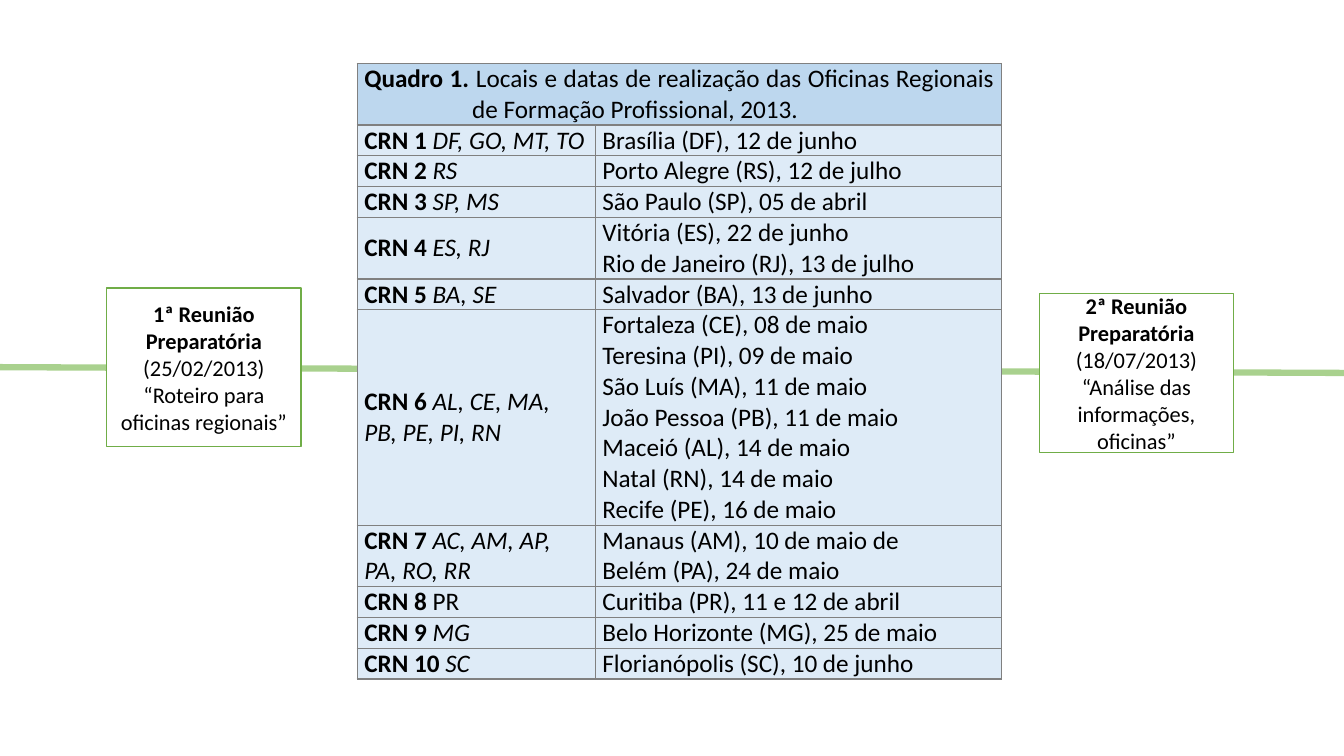
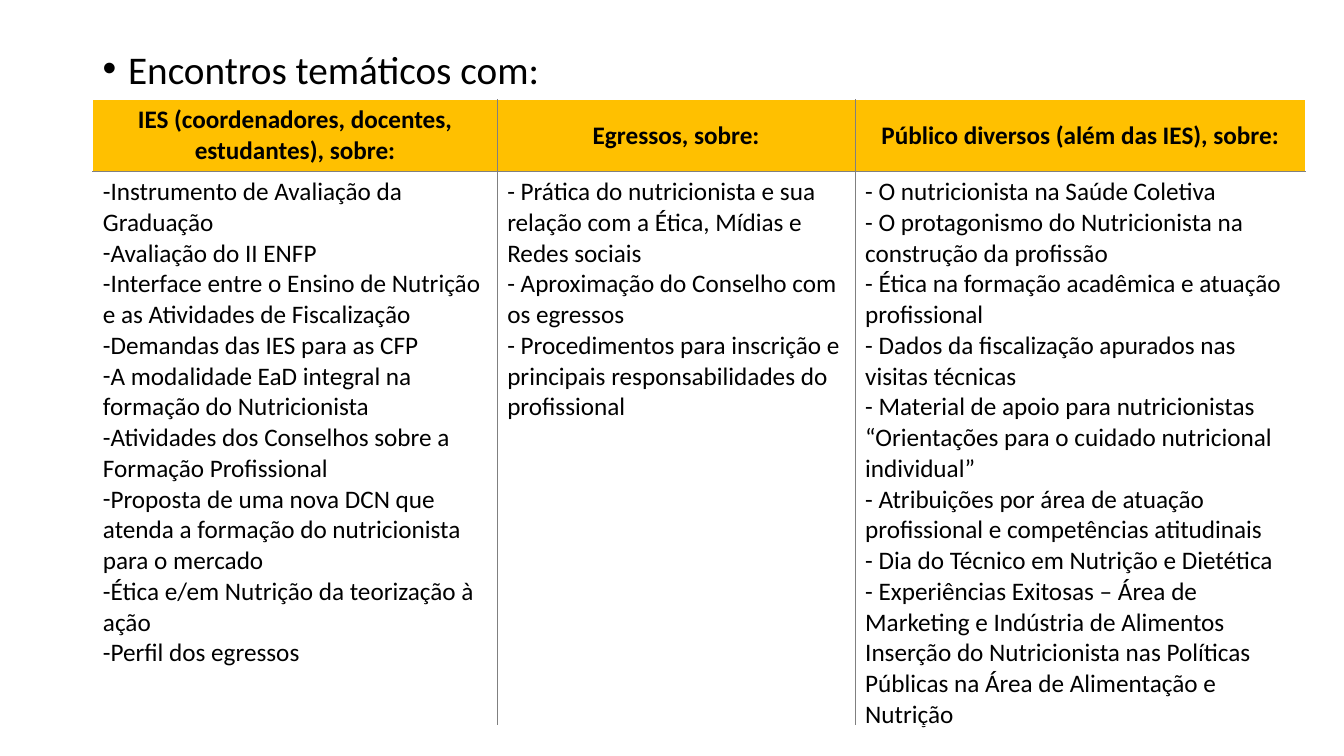
from lxml import etree
from pptx import Presentation
from pptx.dml.color import RGBColor
from pptx.enum import shapes, text
from pptx.oxml import ns
from pptx.util import Cm, Pt

FONT = "Calibri"
BLACK = RGBColor(0x00, 0x00, 0x00)
WHITE = RGBColor(0xFF, 0xFF, 0xFF)
GRAY = RGBColor(0x80, 0x80, 0x80)
GREEN = RGBColor(0x70, 0xAD, 0x47)
LIGHT_GREEN = RGBColor(0xA9, 0xD1, 0x8E)
BLUE = RGBColor(0xBD, 0xD7, 0xEE)
PALE_BLUE = RGBColor(0xDE, 0xEB, 0xF7)
AMBER = RGBColor(0xFF, 0xC0, 0x00)


def add_run(paragraph, words, size=18, bold=False, italic=False):
    run = paragraph.add_run()
    run.text = words
    run.font.name = FONT
    run.font.size = Pt(size)
    run.font.bold = bold
    run.font.italic = italic
    run.font.color.rgb = BLACK


def style_cell(cell, fill, borders):
    """Set the fill and the left, right, top and bottom border colours."""
    properties = cell._tc.get_or_add_tcPr()
    for side, color in zip("LRTB", borders):
        line = etree.SubElement(properties, ns.qn(f"a:ln{side}"), w=str(Pt(1)))
        solid = etree.SubElement(line, ns.qn("a:solidFill"))
        etree.SubElement(solid, ns.qn("a:srgbClr"), val=str(color))
    cell.fill.solid()
    cell.fill.fore_color.rgb = fill


prs = Presentation()
prs.slide_width = Cm(33.87)
prs.slide_height = Cm(19.05)
blank = prs.slide_layouts[6]

# Slide 1: timeline with the regional workshops between two meetings
slide = prs.slides.add_slide(blank)

timeline = slide.shapes.add_connector(
    shapes.MSO_CONNECTOR.STRAIGHT, Cm(-0.33), Cm(9.25), Cm(34.52), Cm(9.4))
timeline.line.color.rgb = LIGHT_GREEN
timeline.line.width = Pt(4.5)
etree.SubElement(timeline.line._get_or_add_ln(), ns.qn("a:tailEnd"), type="triangle")
etree.SubElement(timeline._element.spPr, ns.qn("a:effectLst"))

meetings = [
    (2.69, 7.26, "1ª Reunião Preparatória ", "(25/02/2013)",
     "“Roteiro para oficinas regionais”"),
    (26.19, 7.4, "2ª Reunião Preparatória ", "(18/07/2013)",
     "“Análise das informações, oficinas”"),
]
for left, top, meeting, date, subject in meetings:
    box = slide.shapes.add_shape(
        shapes.MSO_SHAPE.RECTANGLE, Cm(left), Cm(top), Cm(4.9), Cm(4))
    box.shadow.inherit = False
    box.fill.solid()
    box.fill.fore_color.rgb = WHITE
    box.line.color.rgb = GREEN
    box.line.width = Pt(1)
    frame = box.text_frame
    frame.word_wrap = True
    frame.vertical_anchor = text.MSO_ANCHOR.MIDDLE
    add_run(frame.paragraphs[0], meeting, 16, bold=True)
    add_run(frame.paragraphs[0], date, 16)
    add_run(frame.add_paragraph(), subject, 16)
    for paragraph in frame.paragraphs:
        paragraph.alignment = text.PP_ALIGN.CENTER

workshops = [
    ("CRN 1 ", "DF, GO, MT, TO", ["Brasília (DF), 12 de junho"]),
    ("CRN 2 ", "RS", ["Porto Alegre (RS), 12 de julho"]),
    ("CRN 3 ", "SP, MS", ["São Paulo (SP), 05 de abril"]),
    ("CRN 4 ", "ES, RJ", ["Vitória (ES), 22 de junho",
                          "Rio de Janeiro (RJ), 13 de julho"]),
    ("CRN 5 ", "BA, SE", ["Salvador (BA), 13 de junho"]),
    ("CRN 6 ", "AL, CE, MA, PB, PE, PI, RN", [
        "Fortaleza (CE), 08 de maio",
        "Teresina (PI), 09 de maio",
        "São Luís (MA), 11 de maio",
        "João Pessoa (PB), 11 de maio",
        "Maceió (AL), 14 de maio",
        "Natal (RN), 14 de maio",
        "Recife (PE), 16 de maio"]),
    ("CRN 7 ", "AC, AM, AP, PA, RO, RR", ["Manaus (AM), 10 de maio de",
                                          "Belém (PA), 24 de maio"]),
    ("CRN 8 ", "PR", ["Curitiba (PR), 11 e 12 de abril"]),
    ("CRN 9 ", "MG", ["Belo Horizonte (MG), 25 de maio"]),
    ("CRN 10 ", "SC", ["Florianópolis (SC), 10 de junho"]),
]
LINE_HEIGHT = 0.76
schedule = slide.shapes.add_table(
    len(workshops) + 1, 2, Cm(9), Cm(1.6), Cm(16.23), Cm(15.24)).table
schedule.first_row = schedule.horz_banding = False
schedule.columns[0].width = Cm(6)
schedule.columns[1].width = Cm(10.23)

for cell in schedule.iter_cells():
    style_cell(cell, PALE_BLUE, [GRAY] * 4)
    cell.vertical_anchor = text.MSO_ANCHOR.MIDDLE
    cell.margin_left = cell.margin_right = Cm(0.18)
    cell.margin_top = cell.margin_bottom = 0

caption = schedule.cell(0, 0)
caption.merge(schedule.cell(0, 1))
caption.fill.fore_color.rgb = BLUE
schedule.rows[0].height = Cm(2 * LINE_HEIGHT)
paragraph = caption.text_frame.paragraphs[0]
paragraph.alignment = text.PP_ALIGN.JUSTIFY
indent = paragraph._p.get_or_add_pPr()
indent.set("marL", str(Cm(2.72)))
indent.set("indent", str(Cm(-2.72)))
add_run(paragraph, "Quadro 1. ", bold=True)
add_run(paragraph, "Locais e datas de realização das Oficinas Regionais "
                   "de Formação Profissional, 2013.")

for row, (council, states, events) in enumerate(workshops, start=1):
    schedule.rows[row].height = Cm(len(events) * LINE_HEIGHT)
    paragraph = schedule.cell(row, 0).text_frame.paragraphs[0]
    add_run(paragraph, council, bold=True)
    add_run(paragraph, states, italic=states != "PR")
    frame = schedule.cell(row, 1).text_frame
    for index, event in enumerate(events):
        add_run(frame.add_paragraph() if index else frame.paragraphs[0], event)

# Slide 2: topics of the thematic meetings by audience
slide = prs.slides.add_slide(blank)

heading = slide.shapes.add_textbox(Cm(2.34), Cm(1.24), Cm(29.21), Cm(1.27)).text_frame
heading.word_wrap = True
paragraph = heading.paragraphs[0]
paragraph.line_spacing = 0.8
indent = paragraph._p.get_or_add_pPr()
indent.set("marL", str(Cm(0.64)))
indent.set("indent", str(Cm(-0.64)))
etree.SubElement(indent, ns.qn("a:buFont"), typeface="Arial")
etree.SubElement(indent, ns.qn("a:buChar"), char="•")
add_run(paragraph, "Encontros temáticos com:", 28)

# Width, title, whether the dash is a bullet, topics
audiences = [
    (10.19, "IES (coordenadores, docentes, estudantes), sobre:", True, [
        "Instrumento de Avaliação da Graduação",
        "Avaliação do II ENFP",
        "Interface entre o Ensino de Nutrição e as Atividades de Fiscalização",
        "Demandas das IES para as CFP",
        "A modalidade EaD integral na formação do Nutricionista",
        "Atividades dos Conselhos sobre a Formação Profissional",
        "Proposta de uma nova DCN que atenda a formação do nutricionista para o mercado",
        "Ética e/em Nutrição da teorização à ação",
        "Perfil dos egressos"]),
    (9.02, "Egressos, sobre:", False, [
        "- Prática do nutricionista e sua relação com a Ética, Mídias e Redes sociais",
        "- Aproximação do Conselho com os egressos",
        "- Procedimentos para inscrição e principais responsabilidades do profissional"]),
    (11.35, "Público diversos (além das IES), sobre:", False, [
        "- O nutricionista na Saúde Coletiva",
        "- O protagonismo do Nutricionista na construção da profissão",
        "- Ética na formação acadêmica e atuação profissional",
        "- Dados da fiscalização apurados nas visitas técnicas",
        "- Material de apoio para nutricionistas “Orientações para o cuidado "
        "nutricional individual”",
        "- Atribuições por área de atuação profissional e competências atitudinais",
        "- Dia do Técnico em Nutrição e Dietética",
        "- Experiências Exitosas – Área de Marketing e Indústria de Alimentos",
        "Inserção do Nutricionista nas Políticas Públicas na Área de Alimentação "
        "e Nutrição"]),
]
topics_table = slide.shapes.add_table(
    2, len(audiences), Cm(2.34), Cm(2.51), Cm(30.56), Cm(15.75)).table
topics_table.first_row = topics_table.horz_banding = False
topics_table.rows[0].height = Cm(1.81)
topics_table.rows[1].height = Cm(13.94)

for column, (width, title, bulleted, topics) in enumerate(audiences):
    topics_table.columns[column].width = Cm(width)
    left = GRAY if column else WHITE
    right = GRAY if column < len(audiences) - 1 else WHITE

    header = topics_table.cell(0, column)
    style_cell(header, AMBER, [left, right, WHITE, GRAY])
    header.vertical_anchor = text.MSO_ANCHOR.MIDDLE
    paragraph = header.text_frame.paragraphs[0]
    paragraph.alignment = text.PP_ALIGN.CENTER
    add_run(paragraph, title, bold=True)

    body = topics_table.cell(1, column)
    style_cell(body, WHITE, [left, right, GRAY, WHITE])
    frame = body.text_frame
    for index, topic in enumerate(topics):
        paragraph = frame.add_paragraph() if index else frame.paragraphs[0]
        if bulleted:
            indent = paragraph._p.get_or_add_pPr()
            indent.set("marL", "0")
            indent.set("indent", "0")
            etree.SubElement(indent, ns.qn("a:buFont"), typeface=FONT)
            etree.SubElement(indent, ns.qn("a:buChar"), char="-")
        add_run(paragraph, topic)

prs.save("out.pptx")
